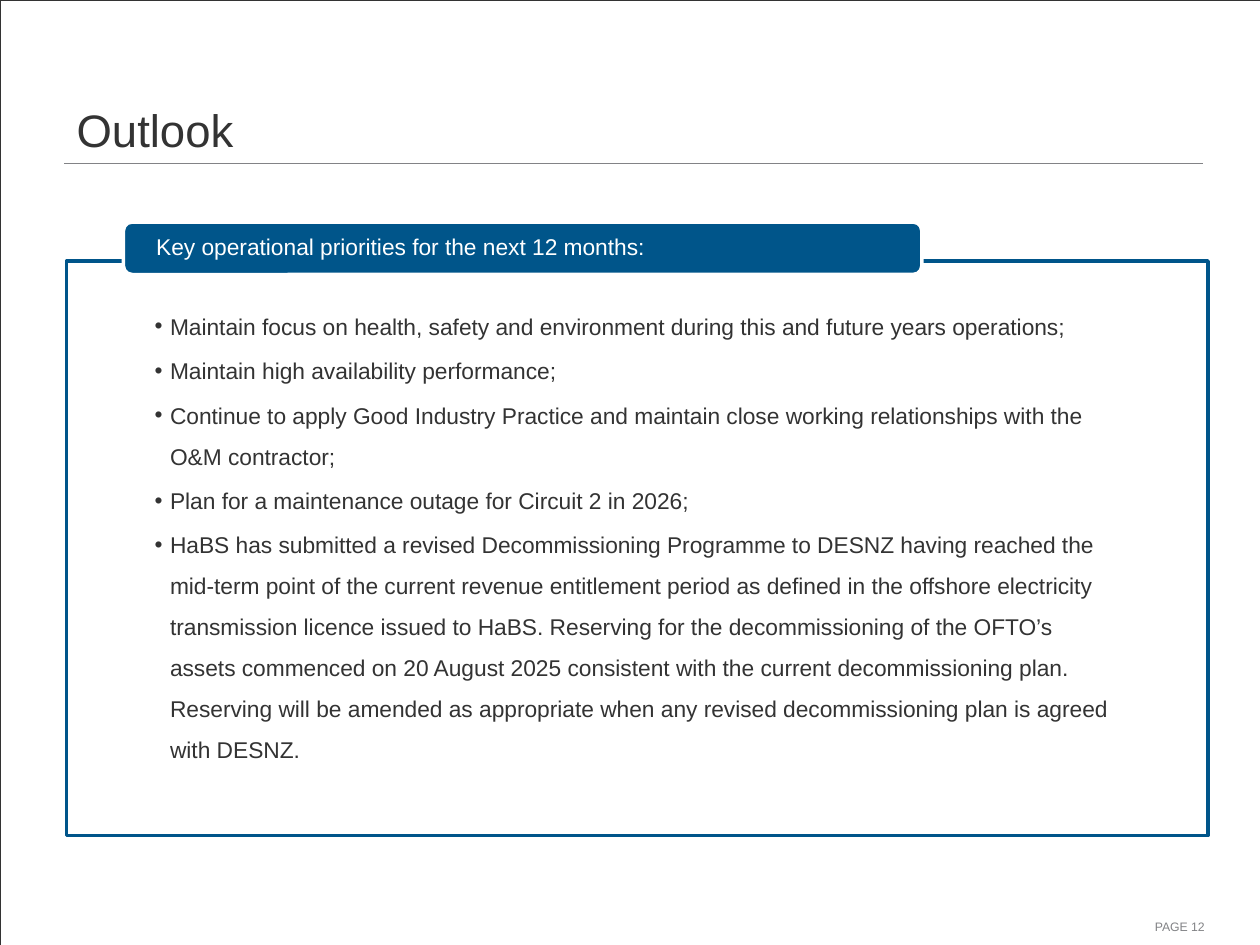
from dataclasses import dataclass

from lxml.etree import SubElement
from pptx import Presentation
from pptx.dml.color import RGBColor
from pptx.enum.shapes import MSO_CONNECTOR, MSO_SHAPE
from pptx.enum.text import MSO_ANCHOR, PP_ALIGN
from pptx.oxml.ns import qn
from pptx.util import Pt


@dataclass(frozen=True)
class Theme:
    font: str = "Arial"
    ink: str = "333333"
    grey: str = "828386"
    blue: str = "00558A"
    white: str = "FFFFFF"
    title: float = 26
    body: float = 13
    footer: float = 7


THEME = Theme()
WIDTH, HEIGHT = 720, 540

PRIORITIES = [
    "Maintain focus on health, safety and environment during this and future years operations;",
    "Maintain high availability performance;",
    "Continue to apply Good Industry Practice and maintain close working relationships "
    "with the O&M contractor;",
    "Plan for a maintenance outage for Circuit 2 in 2026;",
    "HaBS has submitted a revised Decommissioning Programme to DESNZ having reached the "
    "mid-term point of the current revenue entitlement period as defined in the offshore "
    "electricity transmission licence issued to HaBS. Reserving for the decommissioning of "
    "the OFTO’s assets commenced on 20 August 2025 consistent with the current "
    "decommissioning plan. Reserving will be amended as appropriate when any revised "
    "decommissioning plan is agreed with DESNZ.",
]


def rgb(color):
    return RGBColor.from_string(color)


def add_box(s, kind, bounds, line, width, fill=None, alpha=None):
    sp = s.shapes.add_shape(kind, *map(Pt, bounds))
    sp.shadow.inherit = False
    sp.line.color.rgb = rgb(line)
    sp.line.width = Pt(width)
    if fill is None:
        sp.fill.background()
        return
    sp.fill.solid()
    sp.fill.fore_color.rgb = rgb(fill)
    if alpha is not None:
        clr = sp._element.spPr.find(qn("a:solidFill"))[0]
        SubElement(clr, qn("a:alpha")).set("val", str(alpha * 1000))


def add_rule(s, x1, x2, y, color, width):
    cn = s.shapes.add_connector(MSO_CONNECTOR.STRAIGHT, Pt(x1), Pt(y), Pt(x2), Pt(y))
    cn.line.color.rgb = rgb(color)
    cn.line.width = Pt(width)
    SubElement(cn._element.spPr, qn("a:effectLst"))


def add_bullet(p, indent):
    pPr = p._p.get_or_add_pPr()
    pPr.set("marL", str(Pt(indent)))
    pPr.set("indent", str(-Pt(indent)))
    SubElement(pPr, qn("a:buFont")).set("typeface", THEME.font)
    SubElement(pPr, qn("a:buChar")).set("char", "•")


def add_text(s, bounds, lines, size, color, insets, anchor=MSO_ANCHOR.TOP,
             align=PP_ALIGN.LEFT, spacing=1.0, after=0, indent=None):
    tf = s.shapes.add_textbox(*map(Pt, bounds)).text_frame
    tf.word_wrap = True
    tf.vertical_anchor = anchor
    tf.margin_left, tf.margin_top, tf.margin_right, tf.margin_bottom = map(Pt, insets)
    tf.text = "\n".join(lines)
    for p in tf.paragraphs:
        if indent:
            add_bullet(p, indent)
        p.alignment = align
        p.line_spacing = spacing
        p.space_after = Pt(after)
        for r in p.runs:
            r.font.name = THEME.font
            r.font.size = Pt(size)
            r.font.color.rgb = rgb(color)


def add_frame(s):
    add_text(s, (599, 522, 96.5, 15.8), ["PAGE 12"], THEME.footer, THEME.grey,
             (7.2, 3.6, 7.2, 3.6), align=PP_ALIGN.RIGHT)
    add_box(s, MSO_SHAPE.RECTANGLE, (0, 0, WIDTH, HEIGHT), THEME.ink, 0.25)
    add_rule(s, 36.7, 687.6, 93.4, THEME.grey, 0.75)
    add_text(s, (36.7, 16.6, 481.7, 76.3), ["Outlook"], THEME.title, THEME.ink,
             (7.2, 2.9, 2.9, 2.9), anchor=MSO_ANCHOR.BOTTOM, spacing=0.9)


def add_priorities(s):
    panel = (38, 149.2, 652.3, 328.3)
    add_box(s, MSO_SHAPE.RECTANGLE, panel, THEME.blue, 2, THEME.white, 90)
    add_text(s, panel, PRIORITIES, THEME.body, THEME.ink, (50.4, 21.6, 50.4, 7.2),
             spacing=1.5, after=1.95, indent=8.8)
    add_box(s, MSO_SHAPE.ROUNDED_RECTANGLE, (70.5, 126.9, 456.3, 30), THEME.white, 2,
            THEME.blue)
    add_text(s, (72, 128.2, 453.6, 27.4),
             ["Key operational priorities for the next 12 months:"],
             THEME.body, THEME.white, (17.3, 0, 17.3, 0),
             anchor=MSO_ANCHOR.MIDDLE, spacing=0.9)


def main():
    prs = Presentation()
    prs.slide_width, prs.slide_height = Pt(WIDTH), Pt(HEIGHT)
    s = prs.slides.add_slide(prs.slide_layouts[6])
    add_frame(s)
    add_priorities(s)
    prs.save("out.pptx")


if __name__ == "__main__":
    main()
